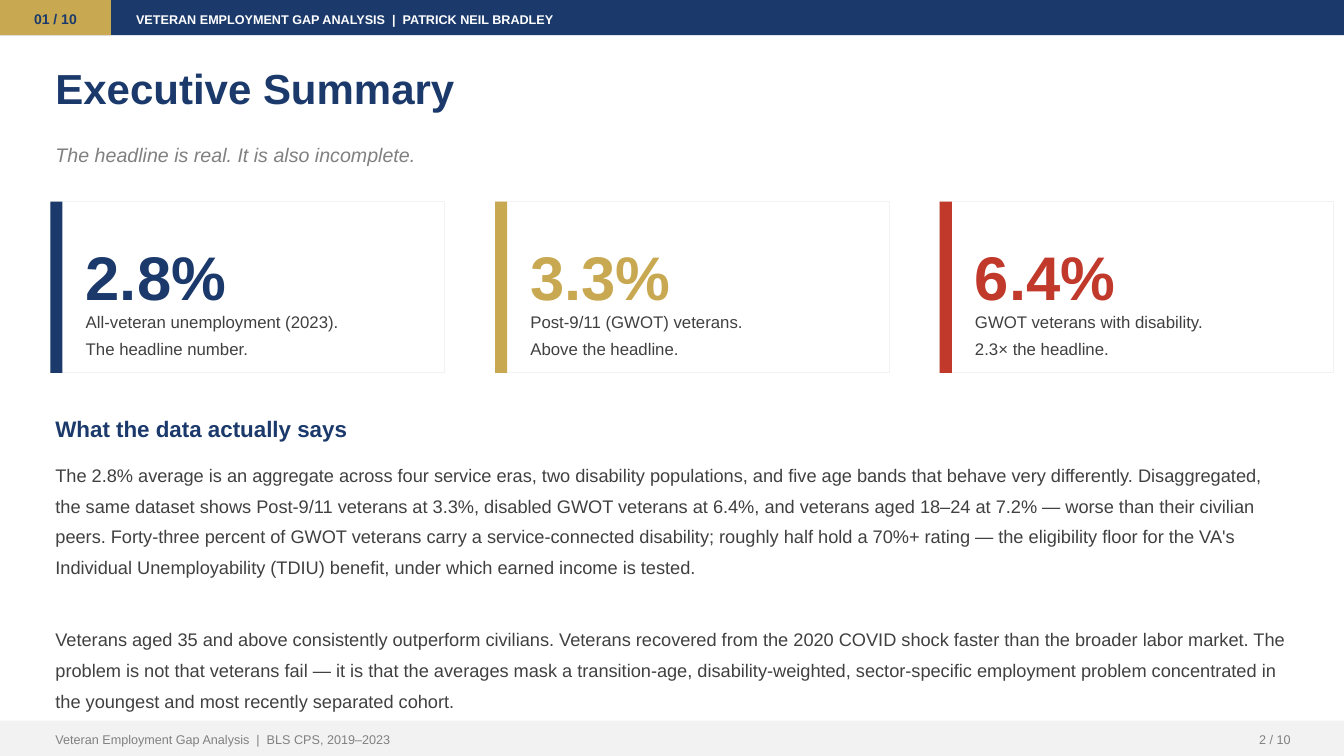
from pptx import Presentation
from pptx import util as u
from pptx.dml import color
from pptx.enum import shapes, text

PX = 9144
PAGE_WIDTH, PAGE_HEIGHT, BAND = 1333, 750, 35
MARGIN, BODY_WIDTH = 50, 1230
NAVY, GOLD, RED = "1B3A6B", "C8A951", "C0392B"
WHITE, PALE, GREY, DARK = "FFFFFF", "F2F2F2", "808080", "404040"
LEFT, CENTER, RIGHT = text.PP_ALIGN.LEFT, text.PP_ALIGN.CENTER, text.PP_ALIGN.RIGHT
TOP, MIDDLE = text.MSO_ANCHOR.TOP, text.MSO_ANCHOR.MIDDLE

CARDS = [
    ("2.8%", NAVY, ["All-veteran unemployment (2023).", "The headline number."]),
    ("3.3%", GOLD, ["Post-9/11 (GWOT) veterans.", "Above the headline."]),
    ("6.4%", RED, ["GWOT veterans with disability.", "2.3× the headline."]),
]
FINDINGS = [
    "The 2.8% average is an aggregate across four service eras, two disability "
    "populations, and five age bands that behave very differently. Disaggregated, "
    "the same dataset shows Post-9/11 veterans at 3.3%, disabled GWOT veterans at "
    "6.4%, and veterans aged 18–24 at 7.2% — worse than their civilian peers. "
    "Forty-three percent of GWOT veterans carry a service-connected disability; "
    "roughly half hold a 70%+ rating — the eligibility floor for the VA's "
    "Individual Unemployability (TDIU) benefit, under which earned income is tested.",
    "Veterans aged 35 and above consistently outperform civilians. Veterans "
    "recovered from the 2020 COVID shock faster than the broader labor market. "
    "The problem is not that veterans fail — it is that the averages mask a "
    "transition-age, disability-weighted, sector-specific employment problem "
    "concentrated in the youngest and most recently separated cohort.",
]


def rgb(value):
    return color.RGBColor.from_string(value)


def scaled(*lengths):
    return [u.Emu(length * PX) for length in lengths]


def add_block(page, left, top, width, height, fill, line=None):
    block = page.shapes.add_shape(
        shapes.MSO_SHAPE.RECTANGLE, *scaled(left, top, width, height))
    block.shadow.inherit = False
    block.fill.solid()
    block.fill.fore_color.rgb = rgb(fill)
    if line:
        block.line.color.rgb = rgb(line)
        block.line.width = u.Pt(0.75)
    else:
        block.line.fill.background()


def add_text(page, left, top, width, height, lines, size, ink, bold=False,
             italic=False, align=LEFT, anchor=TOP, spacing=1.2, gap=0):
    box = page.shapes.add_textbox(*scaled(left, top, width, height))
    frame = box.text_frame
    frame.word_wrap = True
    frame.auto_size = text.MSO_AUTO_SIZE.SHAPE_TO_FIT_TEXT
    frame.vertical_anchor = anchor
    frame.margin_left, frame.margin_right = scaled(5, 5)
    frame.margin_top, frame.margin_bottom = scaled(2, 2)
    for index, line in enumerate(lines):
        para = frame.add_paragraph() if index else frame.paragraphs[0]
        para.alignment = align
        para.line_spacing = spacing
        if index and gap:
            para.space_before = u.Pt(gap)
        span = para.add_run()
        span.text = line
        span.font.name = "Arial"
        span.font.size = u.Pt(size)
        span.font.bold = bold
        span.font.italic = italic
        span.font.color.rgb = rgb(ink)


def add_header(page, left, top, width, height):
    tag_width = 110
    add_block(page, left, top, width, height, NAVY)
    add_block(page, left, top, tag_width, height, GOLD)
    add_text(page, left, top, tag_width, height, ["01 / 10"], 10, NAVY,
             bold=True, align=CENTER, anchor=MIDDLE)
    add_text(page, left + tag_width + 20, top, 1100, height,
             ["VETERAN EMPLOYMENT GAP ANALYSIS  |  PATRICK NEIL BRADLEY"],
             9, WHITE, bold=True, anchor=MIDDLE)


def add_heading(page, left, top, width):
    add_text(page, left, top, width, 90, ["Executive Summary"], 30, NAVY,
             bold=True, spacing=1.1)
    add_text(page, left, top + 80, width, 50,
             ["The headline is real. It is also incomplete."], 14, GREY, italic=True)


def add_card(page, left, top, width, height, figure, accent, caption):
    add_block(page, left, top, width, height, WHITE, line=PALE)
    add_block(page, left, top, 12, height, accent)
    add_text(page, left + 30, top + 20, width - 40, 75, [figure], 44, accent, bold=True)
    add_text(page, left + 30, top + 100, width - 40, 65, caption, 12, DARK, spacing=1.35)


def add_cards(page, left, top, card_width, height, gap):
    for index, card in enumerate(CARDS):
        add_card(page, left + index * (card_width + gap), top, card_width, height, *card)


def add_findings(page, left, top, width):
    add_text(page, left, top, width, 40, ["What the data actually says"], 16, NAVY, bold=True)
    add_text(page, left, top + 45, width, 250, FINDINGS, 13, DARK, spacing=1.4, gap=30)


def add_footer(page, left, top, width, height):
    add_block(page, left, top, width, height, PALE)
    add_text(page, left + MARGIN, top, 800, height,
             ["Veteran Employment Gap Analysis  |  BLS CPS, 2019–2023"],
             9, GREY, anchor=MIDDLE)
    add_text(page, left + 1170, top, 115, height, ["2 / 10"], 9, GREY,
             align=RIGHT, anchor=MIDDLE)


def main():
    deck = Presentation()
    deck.slide_width, deck.slide_height = scaled(PAGE_WIDTH, PAGE_HEIGHT)
    page = deck.slides.add_slide(deck.slide_layouts[6])
    page.background.fill.solid()
    page.background.fill.fore_color.rgb = rgb(WHITE)
    add_header(page, 0, 0, PAGE_WIDTH, BAND)
    add_heading(page, MARGIN, 55, BODY_WIDTH)
    add_cards(page, MARGIN, 200, 391, 170, 50)
    add_findings(page, MARGIN, 405, BODY_WIDTH)
    add_footer(page, 0, PAGE_HEIGHT - BAND, PAGE_WIDTH, BAND)
    deck.save("out.pptx")


if __name__ == "__main__":
    main()
